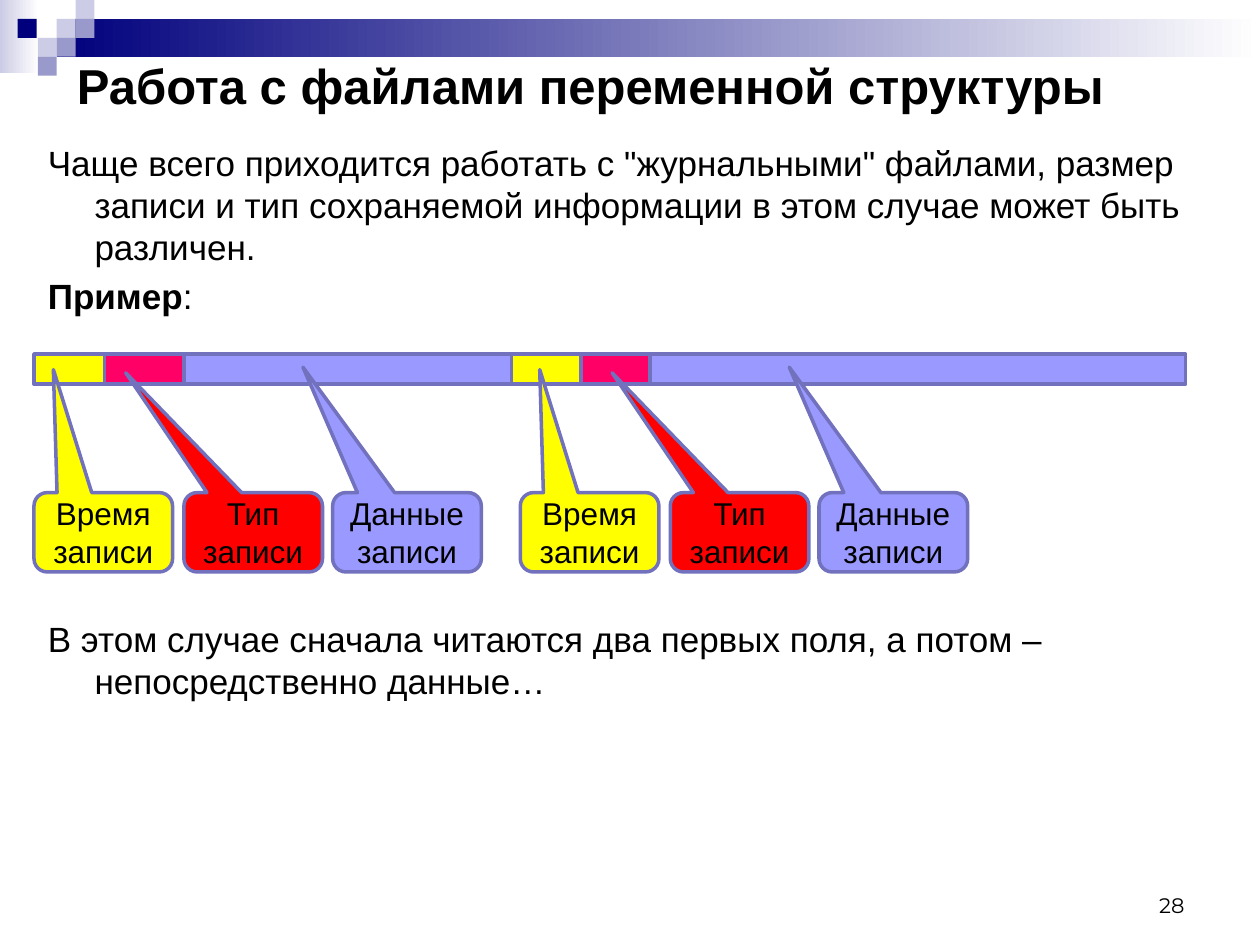
from dataclasses import dataclass

from lxml.etree import SubElement
from pptx import Presentation
from pptx.dml.color import RGBColor
from pptx.enum.shapes import MSO_SHAPE
from pptx.enum.text import MSO_ANCHOR, MSO_AUTO_SIZE, PP_ALIGN
from pptx.oxml.ns import qn
from pptx.util import Inches, Pt


@dataclass(frozen=True)
class Theme:
    font: str = "Arial"
    num_font: str = "Montserrat"
    ink: str = "000000"
    white: str = "FFFFFF"
    navy: str = "00007D"
    pale: str = "CCCCE6"
    mid: str = "9999CC"
    edge: str = "7171BD"
    yellow: str = "FFFF00"
    pink: str = "FF0066"
    red: str = "FF0000"
    blue: str = "9999FF"
    head: int = 28
    body: int = 20
    label: int = 18
    small: int = 12


class Deck:
    def __init__(self, theme):
        self.theme = theme
        self.prs = Presentation()
        self.prs.slide_width = Inches(10)
        self.prs.slide_height = Inches(7.5)
        self.slide = self.prs.slides.add_slide(self.prs.slide_layouts[1])

    def place(self, shape, box):
        shape.left, shape.top, shape.width, shape.height = map(Inches, box)

    def style(self, frame, size, align, bold=False, font=None):
        for para in frame.paragraphs:
            para.alignment = align
            for run in para.runs:
                run.font.name = font or self.theme.font
                run.font.size = Pt(size)
                run.font.bold = bold
                run.font.color.rgb = RGBColor.from_string(self.theme.ink)

    def shape(self, kind, box, fill, edge=None):
        shape = self.slide.shapes.add_shape(kind, *map(Inches, box))
        shape.shadow.inherit = False
        shape.fill.solid()
        shape.fill.fore_color.rgb = RGBColor.from_string(fill)
        if edge:
            shape.line.color.rgb = RGBColor.from_string(edge)
            shape.line.width = Pt(2)
        else:
            shape.line.fill.background()
        return shape

    def rect(self, box, fill, edge=None):
        return self.shape(MSO_SHAPE.RECTANGLE, box, fill, edge)

    def fade(self, box, start, end):
        fill = self.rect(box, start).fill
        fill.gradient()
        fill.gradient_angle = 0
        for stop, color in zip(fill.gradient_stops, (start, end)):
            stop.color.rgb = RGBColor.from_string(color)

    def callout(self, box, fill, text, tip):
        shape = self.shape(MSO_SHAPE.ROUNDED_RECTANGULAR_CALLOUT, box, fill, self.theme.edge)
        for index, value in enumerate((*tip, 0.167)):
            shape.adjustments[index] = value
        frame = shape.text_frame
        frame.word_wrap = True
        frame.vertical_anchor = MSO_ANCHOR.MIDDLE
        frame.text = text
        self.style(frame, self.theme.label, PP_ALIGN.CENTER)

    def title(self, box, text):
        shape = self.slide.shapes.title
        self.place(shape, box)
        frame = shape.text_frame
        frame.auto_size = MSO_AUTO_SIZE.NONE
        frame.vertical_anchor = MSO_ANCHOR.MIDDLE
        frame.text = text
        self.style(frame, self.theme.head, PP_ALIGN.LEFT, bold=True)

    def body(self, box, items):
        shape = self.slide.placeholders[1]
        self.place(shape, box)
        frame = shape.text_frame
        frame.auto_size = MSO_AUTO_SIZE.NONE
        frame.text = "\n".join(text for text, gap in items)
        self.style(frame, self.theme.body, PP_ALIGN.LEFT)
        for para, (text, gap) in zip(frame.paragraphs, items):
            para.space_before = Pt(gap)
            props = para._p.get_or_add_pPr()
            props.set("marL", str(Inches(0.38)))
            props.set("indent", str(Inches(-0.37)))
            SubElement(props, qn("a:buNone"))
        return frame

    def number(self, box, text):
        frame = self.slide.shapes.add_textbox(*map(Inches, box)).text_frame
        frame.word_wrap = True
        frame.vertical_anchor = MSO_ANCHOR.BOTTOM
        frame.text = text
        self.style(frame, self.theme.small, PP_ALIGN.RIGHT, font=self.theme.num_font)


def main():
    theme = Theme()
    deck = Deck(theme)

    deck.fade((0, 0, 0.31, 0.58), theme.pale, theme.white)
    deck.fade((0.45, 0.15, 9.55, 0.3), theme.navy, theme.white)
    tiles = [
        (0.45, 0.15, theme.pale), (0.6, 0, theme.pale), (0.6, 0.15, theme.mid),
        (0.3, 0.3, theme.pale), (0.14, 0.15, theme.navy),
        (0.45, 0.3, theme.mid), (0.3, 0.45, theme.mid),
    ]
    for left, top, fill in tiles:
        deck.rect((left, top, 0.15, 0.15), fill)

    deck.number((7.17, 6.83, 2.33, 0.5), "28")
    deck.title((0.51, 0.44, 9.49, 0.46), "Работа с файлами переменной структуры")
    frame = deck.body((0.27, 1.07, 9.45, 6.14), [
        ('Чаще всего приходится работать с "журнальными" файлами, размер записи '
         "и тип сохраняемой информации в этом случае может быть различен.", 4),
        ("Пример", 4),
        ("В этом случае сначала читаются два первых поля, "
         "а потом – непосредственно данные…", 172),
    ])
    sample = frame.paragraphs[1]
    colon = sample.add_run()
    colon.text = ":"
    deck.style(frame, theme.body, PP_ALIGN.LEFT)
    sample.runs[0].font.bold = True

    left = 0.27
    fills = (theme.yellow, theme.pink, theme.blue) * 2
    for width, fill in zip((0.56, 0.63, 2.6, 0.55, 0.55, 4.25), fills):
        deck.rect((left, 2.81, width, 0.24), fill, theme.edge)
        left += width

    notes = [
        (0, 1.1, theme.yellow, "Время записи", (-0.36, -2.05)),
        (1.19, 1.1, theme.red, "Тип записи", (-0.92, -2.01)),
        (2.37, 1.18, theme.blue, "Данные\nзаписи", (-0.7, -2.08)),
    ]
    for start in (0.27, 4.13):
        for shift, width, fill, text, tip in notes:
            deck.callout((start + shift, 3.91, width, 0.63), fill, text, tip)

    deck.prs.save("out.pptx")


if __name__ == "__main__":
    main()
